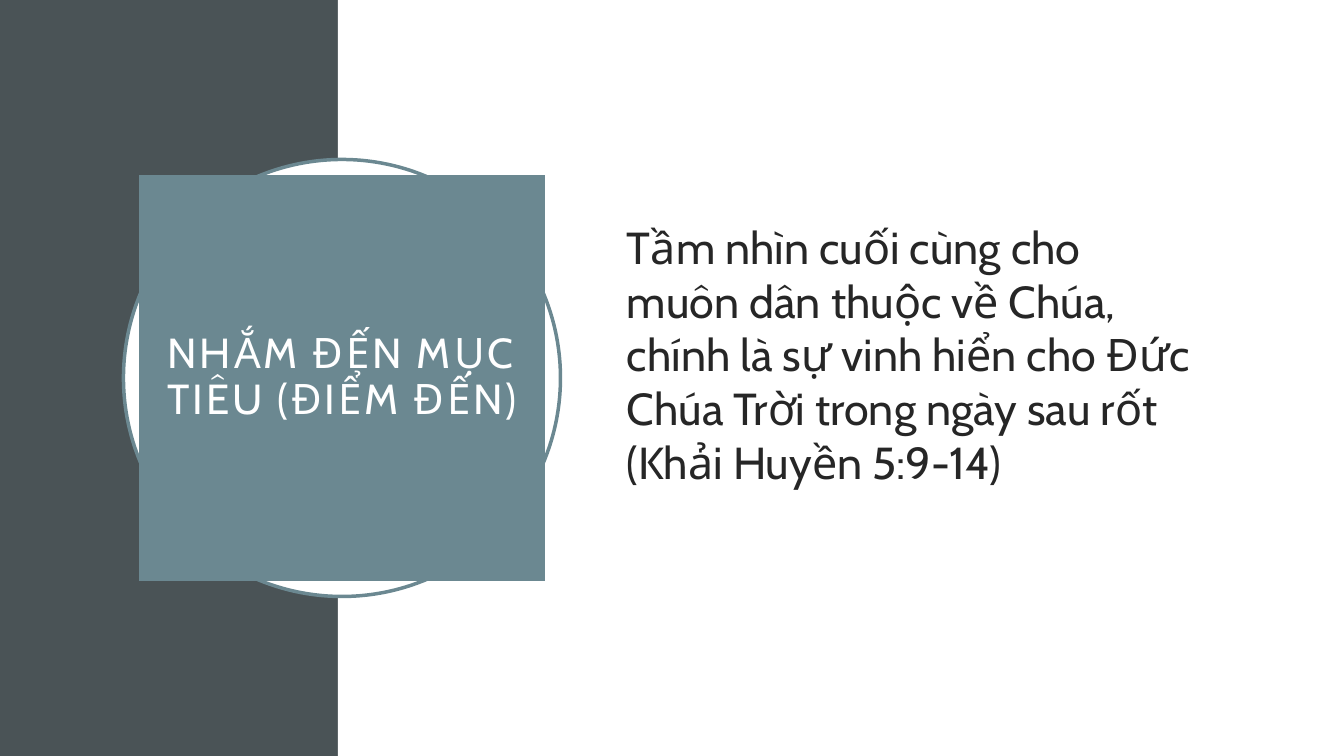
from pptx import Presentation
from pptx.dml.color import RGBColor
from pptx.enum.shapes import MSO_SHAPE
from pptx.enum.text import MSO_ANCHOR, PP_ALIGN
from pptx.util import Pt

TITLE = "NHẮM ĐẾN MỤC TIÊU (ĐIỂM ĐẾN)"
BODY = ("Tầm nhìn cuối cùng cho muôn dân thuộc về Chúa, "
        "chính là sự vinh hiển cho Đức Chúa Trời trong ngày sau rốt "
        "(Khải Huyền 5:9-14)")

THEME = {
    "font": "Cabin",
    "dark": "4A5356", "teal": "6B8891", "white": "FFFFFF", "ink": "262626",
    "title": 30, "body": 32, "ring": 2.5, "track": 200,
}

# Lengths in px, 100.8 to the inch
WIDE, HIGH = 1344, 756
SPLIT = 338
HUB = (342, 378)
RING, CARD = 437, 406
TEXT = (617, 154, 587, 446)


def px(n):
    return round(n * 914400 / 100.8)


def color(name):
    return RGBColor.from_string(THEME[name])


def hub_box(size):
    return HUB[0] - size / 2, HUB[1] - size / 2, size, size


def add_part(kind, box, fill, line=None):
    part = slide.shapes.add_shape(kind, *map(px, box))
    part.shadow.inherit = False
    part.fill.solid()
    part.fill.fore_color.rgb = color(fill)
    if line:
        part.line.color.rgb = color(line)
        part.line.width = Pt(THEME["ring"])
    else:
        part.line.fill.background()
    return part


def set_text(part, text, size, tint, align, pads):
    frame = part.text_frame
    frame.word_wrap = True
    frame.vertical_anchor = MSO_ANCHOR.MIDDLE
    (frame.margin_left, frame.margin_top,
     frame.margin_right, frame.margin_bottom) = map(px, pads)
    para = frame.paragraphs[0]
    para.text = text
    para.alignment = align
    para.font.name = THEME["font"]
    para.font.size = Pt(THEME[size])
    para.font.color.rgb = color(tint)
    return para


deck = Presentation()
deck.slide_width, deck.slide_height = px(WIDE), px(HIGH)
slide = deck.slides.add_slide(deck.slide_layouts[6])

# Side band and main panel
add_part(MSO_SHAPE.RECTANGLE, (0, 0, SPLIT, HIGH), "dark")
add_part(MSO_SHAPE.RECTANGLE, (SPLIT, 0, WIDE - SPLIT, HIGH), "white")

# Ring and title card share one centre
add_part(MSO_SHAPE.OVAL, hub_box(RING), "white", "teal")
card = add_part(MSO_SHAPE.RECTANGLE, hub_box(CARD), "teal")
para = set_text(card, TITLE, "title", "white", PP_ALIGN.CENTER, (20, 20, 20, 20))
para.line_spacing = 0.9
para.runs[0].font._element.set("spc", str(THEME["track"]))

# Body text, raised a little by its bottom inset
body = slide.shapes.add_textbox(*map(px, TEXT))
set_text(body, BODY, "body", "ink", PP_ALIGN.LEFT, (10, 5, 10, 51))

deck.save("out.pptx")
